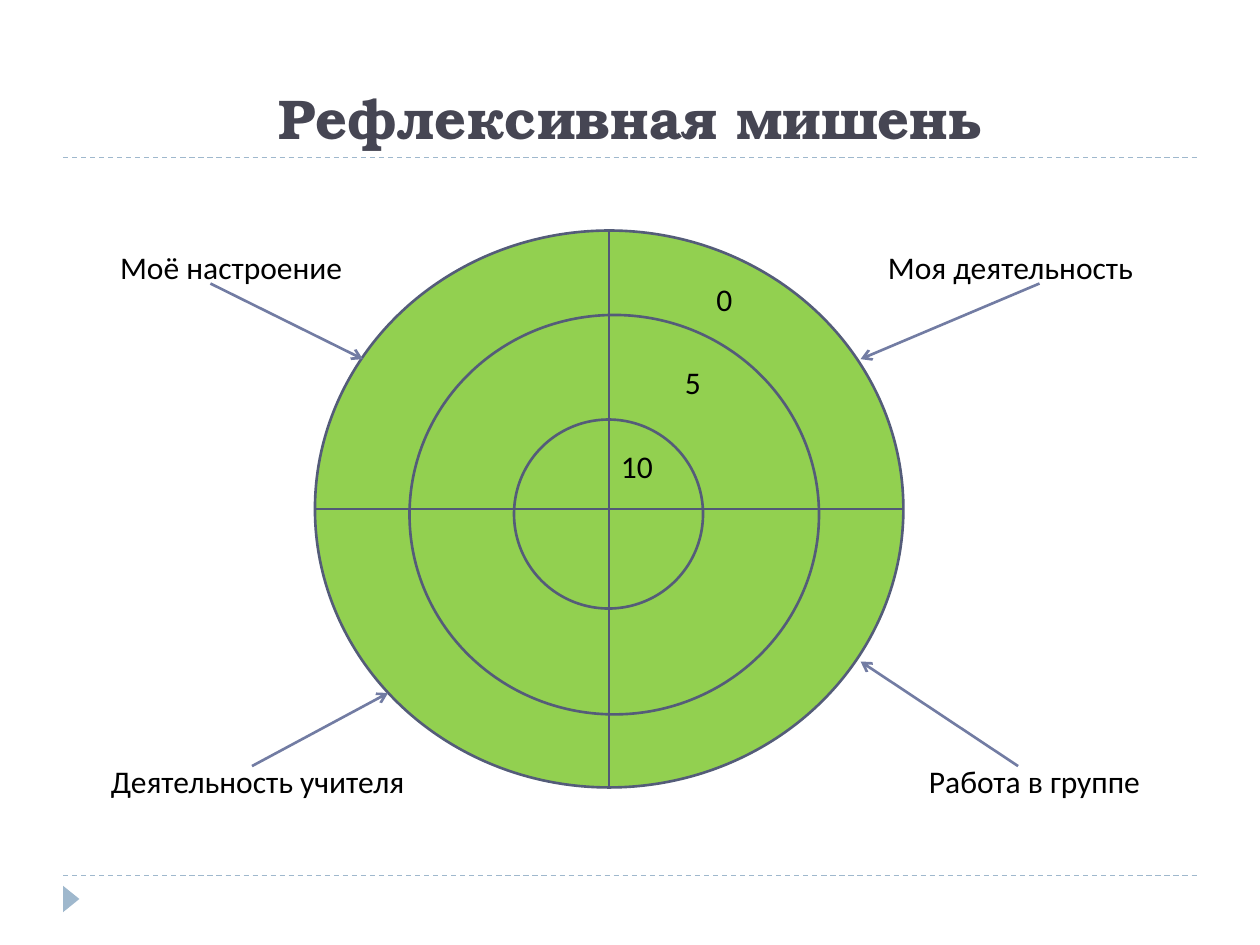
from dataclasses import dataclass

import pptx
import pptx.dml.color
import pptx.enum.dml
import pptx.enum.shapes
import pptx.enum.text
import pptx.oxml.ns
import pptx.oxml.xmlchemy
import pptx.slide
import pptx.util

Inches = pptx.util.Inches
Pt = pptx.util.Pt
RGBColor = pptx.dml.color.RGBColor
MSO_SHAPE = pptx.enum.shapes.MSO_SHAPE
PP_ALIGN = pptx.enum.text.PP_ALIGN
OxmlElement = pptx.oxml.xmlchemy.OxmlElement

BLACK = RGBColor(0x00, 0x00, 0x00)
TITLE_INK = RGBColor(0x46, 0x46, 0x53)
PALE_BLUE = RGBColor(0x9F, 0xB8, 0xCD)
GREEN = RGBColor(0x92, 0xD0, 0x50)
RING_LINE = RGBColor(0x54, 0x5C, 0x79)
AXIS_LINE = RGBColor(0x52, 0x59, 0x77)
ARROW_LINE = RGBColor(0x72, 0x7C, 0xA3)


@dataclass
class Ring:
    left: float
    top: float
    width: float
    height: float
    fill: RGBColor | None = None


@dataclass
class Label:
    text: str
    left: float
    top: float
    width: float
    height: float = 0.4
    align: PP_ALIGN = PP_ALIGN.CENTER


@dataclass
class Line:
    start: tuple[float, float]
    end: tuple[float, float]
    color: RGBColor
    width: float = 1.5
    dashed: bool = False
    arrow: bool = False


TARGET = Ring(2.5, 1.83, 4.67, 4.42, GREEN)
RINGS = [TARGET, Ring(3.25, 2.5, 3.25, 3.17), Ring(4.08, 3.33, 1.5, 1.5)]
RIGHT = TARGET.left + TARGET.width
BOTTOM = TARGET.top + TARGET.height
CENTER_X = TARGET.left + TARGET.width / 2
CENTER_Y = TARGET.top + TARGET.height / 2

RULES = [Line((0.5, y), (9.5, y), PALE_BLUE, 0.75, dashed=True)
         for y in (6.95, 1.25)]
AXES = [
    Line((CENTER_X, TARGET.top), (CENTER_X, BOTTOM), AXIS_LINE),
    Line((RIGHT, CENTER_Y), (TARGET.left, CENTER_Y), AXIS_LINE),
]
LABELS = [
    Label("0", 5.5, 2.17, 0.5),
    Label("5", 5.25, 2.83, 0.5),
    Label("10", 4.83, 3.5, 0.5, align=PP_ALIGN.LEFT),
    Label("Моя деятельность", 6.67, 1.92, 2.7),
    Label("Деятельность учителя", 0.42, 6, 3.25),
    Label("Моё настроение", 0.42, 1.92, 2.83),
    Label("Работа в группе", 6.92, 6, 2.58),
]
ARROWS = [Line(start, end, ARROW_LINE, arrow=True) for start, end in (
    ((1.67, 2.25), (2.88, 2.85)),
    ((8.08, 6.08), (6.83, 5.25)),
    ((8.25, 2.25), (6.83, 2.85)),
    ((2, 6.08), (3.08, 5.5)),
)]


def add_line(s: pptx.slide.Slide, line: Line) -> None:
    sp = s.shapes.add_connector(
        pptx.enum.shapes.MSO_CONNECTOR.STRAIGHT,
        *(Inches(v) for v in line.start + line.end))
    sp.line.color.rgb = line.color
    sp.line.width = Pt(line.width)
    if line.dashed:
        sp.line.dash_style = pptx.enum.dml.MSO_LINE.DASH
    sp_pr = sp._element.find(pptx.oxml.ns.qn("p:spPr"))
    if line.arrow:
        tail = OxmlElement("a:tailEnd")
        tail.set("type", "arrow")
        sp_pr.find(pptx.oxml.ns.qn("a:ln")).append(tail)
    sp_pr.append(OxmlElement("a:effectLst"))


def add_ring(s: pptx.slide.Slide, ring: Ring) -> None:
    sp = s.shapes.add_shape(
        MSO_SHAPE.FLOWCHART_CONNECTOR, Inches(ring.left), Inches(ring.top),
        Inches(ring.width), Inches(ring.height))
    sp.shadow.inherit = False
    if ring.fill is None:
        sp.fill.background()
    else:
        sp.fill.solid()
        sp.fill.fore_color.rgb = ring.fill
    sp.line.color.rgb = RING_LINE
    sp.line.width = Pt(1.5)


def add_run(p, text: str, font: str, size: float, color: RGBColor,
            bold: bool = False) -> None:
    r = p.add_run()
    r.text = text
    r.font.name = font
    r.font.size = Pt(size)
    r.font.color.rgb = color
    r.font.bold = bold


def add_label(s: pptx.slide.Slide, label: Label) -> None:
    sp = s.shapes.add_textbox(Inches(label.left), Inches(label.top),
                              Inches(label.width), Inches(label.height))
    tf = sp.text_frame
    tf.word_wrap = True
    tf.auto_size = pptx.enum.text.MSO_AUTO_SIZE.SHAPE_TO_FIT_TEXT
    p = tf.paragraphs[0]
    p.alignment = label.align
    add_run(p, label.text, "Calibri", 18, BLACK)


def add_title(s: pptx.slide.Slide, text: str) -> None:
    sp = s.shapes.title
    sp.left, sp.top = Inches(0.5), Inches(0.17)
    sp.width, sp.height = Inches(9), Inches(1.08)
    tf = sp.text_frame
    tf.vertical_anchor = pptx.enum.text.MSO_ANCHOR.BOTTOM
    p = tf.paragraphs[0]
    p.alignment = PP_ALIGN.CENTER
    add_run(p, text, "TeX Gyre Bonum", 32, TITLE_INK, bold=True)


def add_corner_marker(s: pptx.slide.Slide) -> None:
    sp = s.shapes.add_shape(MSO_SHAPE.ISOSCELES_TRIANGLE, Inches(0.46),
                            Inches(7.07), Inches(0.21), Inches(0.13))
    sp.rotation = 90
    sp.shadow.inherit = False
    sp.fill.solid()
    sp.fill.fore_color.rgb = PALE_BLUE
    sp.line.fill.background()


def main() -> None:
    prs = pptx.Presentation()
    prs.slide_width, prs.slide_height = Inches(10), Inches(7.5)
    s = prs.slides.add_slide(prs.slide_layouts[5])

    # Frame: dashed rules, corner marker and title
    for rule in RULES:
        add_line(s, rule)
    add_corner_marker(s)
    add_title(s, "Рефлексивная мишень")

    # Target with its quarters
    for ring in RINGS:
        add_ring(s, ring)
    for axis in AXES:
        add_line(s, axis)

    # Scores, quarter names and the arrows to them
    for label in LABELS:
        add_label(s, label)
    for arrow in ARROWS:
        add_line(s, arrow)

    prs.save("out.pptx")


if __name__ == "__main__":
    main()
